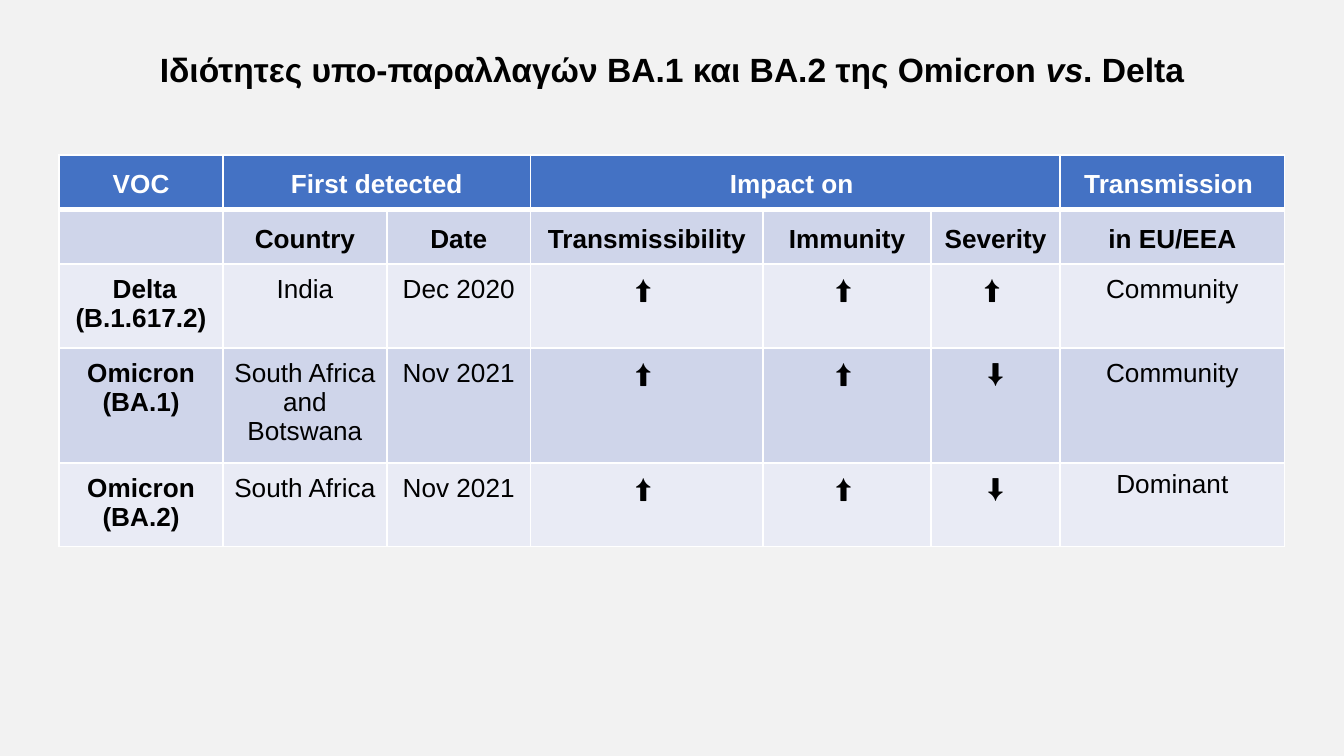
from lxml.etree import SubElement
from pptx import Presentation
from pptx.dml.color import RGBColor
from pptx.enum.text import MSO_ANCHOR, PP_ALIGN
from pptx.oxml.ns import qn
from pptx.util import Pt

HUES = {
    "back": "F2F2F2", "head": "4472C4", "dark": "CFD5EA",
    "pale": "E9EBF5", "ink": "000000", "white": "FFFFFF",
}
COLS = [87.8, 87.8, 77, 124.6, 90, 69.1, 120.3]
ROWS = [
    ["VOC", "First detected", "", "Impact on ", "", "", "Transmission "],
    ["", "Country", "Date", "Transmissibility", "Immunity", "Severity", "in EU/EEA"],
    [" Delta\n(B.1.617.2)", "India", "Dec 2020", "⬆️ ", "⬆️ ", "⬆️ ", "Community"],
    ["Omicron\n(BA.1)", "South Africa and Botswana", "Nov 2021", "⬆️ ", "⬆️ ", "⬇️", "Community"],
    ["Omicron\n(BA.2)", "South Africa", "Nov 2021", "⬆️ ", "⬆️ ", "⬇️", "Dominant"],
]
SPANS = [(1, 2), (3, 5)]
TITLE = [
    ("Ιδιότητες υπο-παραλλαγών BA.1 και BA.2 της Omicron ", False),
    ("vs", True),
    (". Delta", False),
]


class Deck:
    """Hold the style and the current slide, and draw its elements."""

    face = "Arial"

    def __init__(self, wide, high):
        self.show = Presentation()
        self.show.slide_width, self.show.slide_height = Pt(wide), Pt(high)
        self.slide = self.show.slides.add_slide(self.show.slide_layouts[6])
        self.paint(self.slide.background.fill, "back")

    def paint(self, fill, hue):
        fill.solid()
        fill.fore_color.rgb = RGBColor.from_string(HUES[hue])

    def style(self, para, size, hue, bold):
        para.alignment = PP_ALIGN.CENTER
        font = para.font
        font.name, font.size, font.bold = self.face, Pt(size), bold
        font.color.rgb = RGBColor.from_string(HUES[hue])

    def title(self, parts, left, top, wide, high):
        box = self.slide.shapes.add_textbox(Pt(left), Pt(top), Pt(wide), Pt(high))
        frame = box.text_frame
        frame.word_wrap = True
        frame.vertical_anchor = MSO_ANCHOR.MIDDLE
        para = frame.paragraphs[0]
        para.line_spacing = 0.9
        self.style(para, 18, "ink", True)
        for text, slant in parts:
            run = para.add_run()
            run.text = text
            run.font.italic = slant

    def edge(self, cell, row):
        props = cell._tc.get_or_add_tcPr()
        widths = {"L": 1, "R": 1, "T": 3 if row == 1 else 1, "B": 3 if row == 0 else 1}
        for side, width in widths.items():
            line = SubElement(props, qn(f"a:ln{side}"), w=str(Pt(width)))
            fill = SubElement(line, qn("a:solidFill"))
            SubElement(fill, qn("a:srgbClr"), val=HUES["white"])

    def cell(self, cell, text, row, col):
        self.edge(cell, row)
        self.paint(cell.fill, "head" if row == 0 else "dark" if row % 2 else "pale")
        cell.text = text
        if text != "Dominant":
            cell.margin_left = cell.margin_right = Pt(5.6)
            cell.margin_top = cell.margin_bottom = Pt(5.6)
        cell.vertical_anchor = MSO_ANCHOR.BOTTOM if row < 2 else MSO_ANCHOR.TOP
        for para in cell.text_frame.paragraphs:
            self.style(para, 14, "ink" if row else "white", row < 2 or col == 0)

    def table(self, rows, cols, spans, left, top, high):
        frame = self.slide.shapes.add_table(
            len(rows), len(cols), Pt(left), Pt(top), Pt(sum(cols)), Pt(high * len(rows)))
        grid = frame.table
        for col, wide in zip(grid.columns, cols):
            col.width = Pt(wide)
        for r, row in enumerate(rows):
            for c, text in enumerate(row):
                self.cell(grid.cell(r, c), text, r, c)
        for first, last in spans:
            grid.cell(0, first).merge(grid.cell(0, last))


def main():
    deck = Deck(720, 405)
    deck.title(TITLE, 15, 21.6, 690, 34)
    deck.table(ROWS, COLS, SPANS, 31.7, 83, 29.3)
    deck.show.save("out.pptx")


if __name__ == "__main__":
    main()
